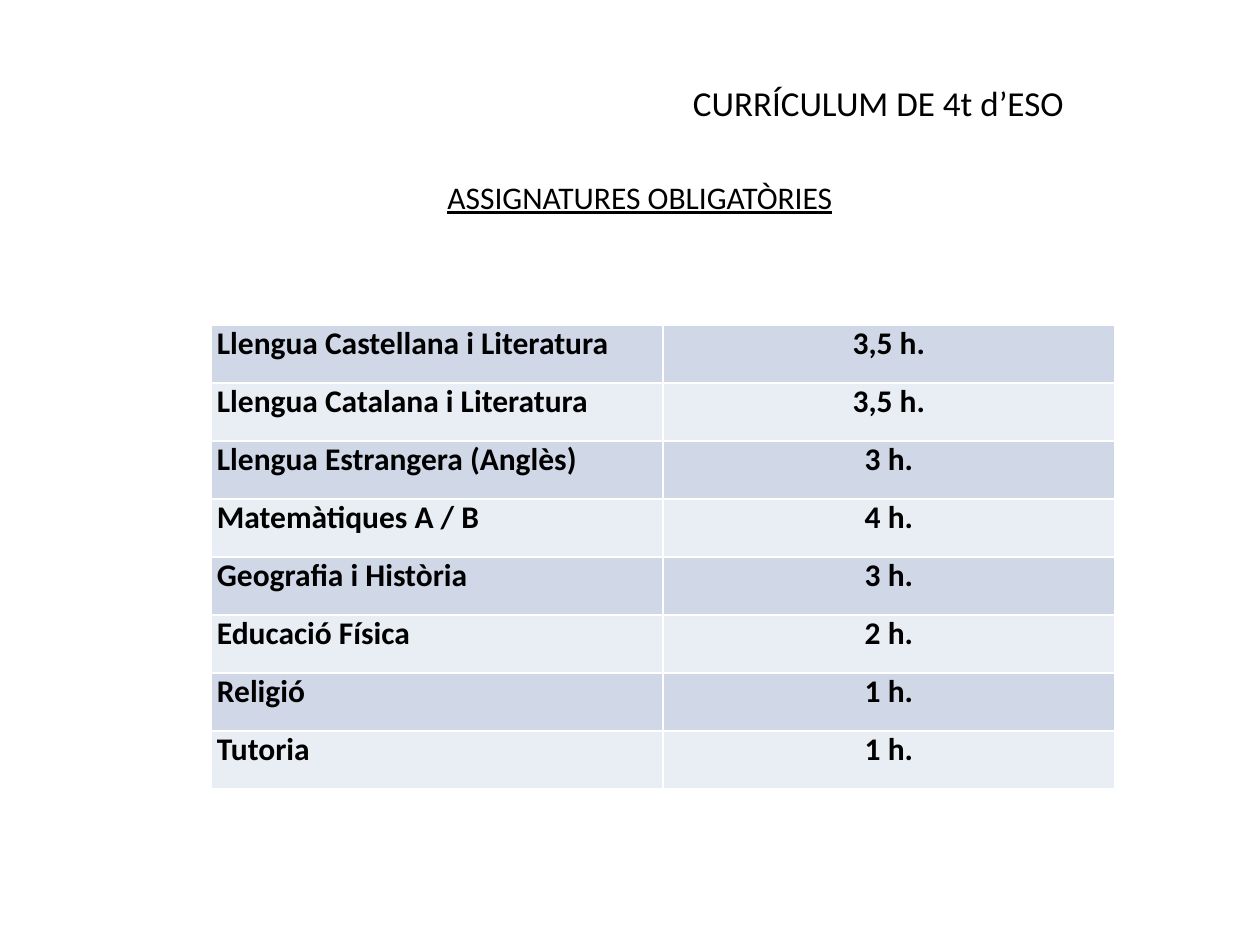
from pptx import Presentation
from pptx import util as u
from pptx.dml.color import RGBColor
from pptx.enum import text
from lxml import etree

PX = 914400 // 126
TITLE = "CURRÍCULUM DE 4t d’ESO"
HEADING = "ASSIGNATURES OBLIGATÒRIES"
SUBJECTS = [
    ("Llengua Castellana i Literatura", "3,5 h."),
    ("Llengua Catalana i Literatura", "3,5 h."),
    ("Llengua Estrangera (Anglès)", "3 h."),
    ("Matemàtiques A / B", "4 h."),
    ("Geografia i Història", "3 h."),
    ("Educació Física", "2 h."),
    ("Religió", "1 h."),
    ("Tutoria", "1 h."),
]
BANDS = ["D0D8E8", "E9EDF4"]
COLUMN, ROW, CELL_INDENT = 452, 58, 6
CENTER, LEFT = text.PP_ALIGN.CENTER, text.PP_ALIGN.LEFT


def color(value):
    return RGBColor.from_string(value)


def style(para, size, align, bold=False, underline=False):
    para.alignment = align
    for span in para.runs:
        span.font.name = "Calibri"
        span.font.size = u.Pt(size)
        span.font.bold = bold
        span.font.underline = underline
        span.font.color.rgb = color("000000")


def fill_placeholder(box, words, place, size, anchor, underline=False):
    box.left, box.top, box.width, box.height = [n * PX for n in place]
    frame = box.text_frame
    frame.text = words
    frame.word_wrap = True
    frame.auto_size = text.MSO_AUTO_SIZE.NONE
    frame.vertical_anchor = anchor
    para = frame.paragraphs[0]
    para.space_before = u.Pt(0)
    style(para, size, CENTER, underline=underline)
    return para


deck = Presentation()
deck.slide_width, deck.slide_height = u.Inches(10), u.Inches(7.5)
page = deck.slides.add_slide(deck.slide_layouts[1])
title, body = page.placeholders

fill_placeholder(title, TITLE, (672, 68, 413, 68), 20, text.MSO_ANCHOR.MIDDLE)
heading = fill_placeholder(body, HEADING, (73, 179, 1134, 674), 18,
                           text.MSO_ANCHOR.TOP, underline=True)
heading.line_spacing = 0.8
properties = heading._p.get_or_add_pPr()
properties.set("marL", "0")
properties.set("indent", "0")
namespace = "http://schemas.openxmlformats.org/drawingml/2006/main"
etree.SubElement(properties, "{%s}buNone" % namespace)

table = page.shapes.add_table(len(SUBJECTS), 2, 211 * PX, 325 * PX,
                              2 * COLUMN * PX, len(SUBJECTS) * ROW * PX).table
table.first_row = False
for r, subject in enumerate(SUBJECTS):
    for c, words in enumerate(subject):
        cell = table.cell(r, c)
        cell.margin_left = 0 if c else CELL_INDENT * PX
        cell.margin_right = cell.margin_top = cell.margin_bottom = 0
        cell.fill.solid()
        cell.fill.fore_color.rgb = color(BANDS[r % 2])
        cell.text_frame.text = words
        style(cell.text_frame.paragraphs[0], 18, CENTER if c else LEFT, bold=True)

deck.save("out.pptx")
